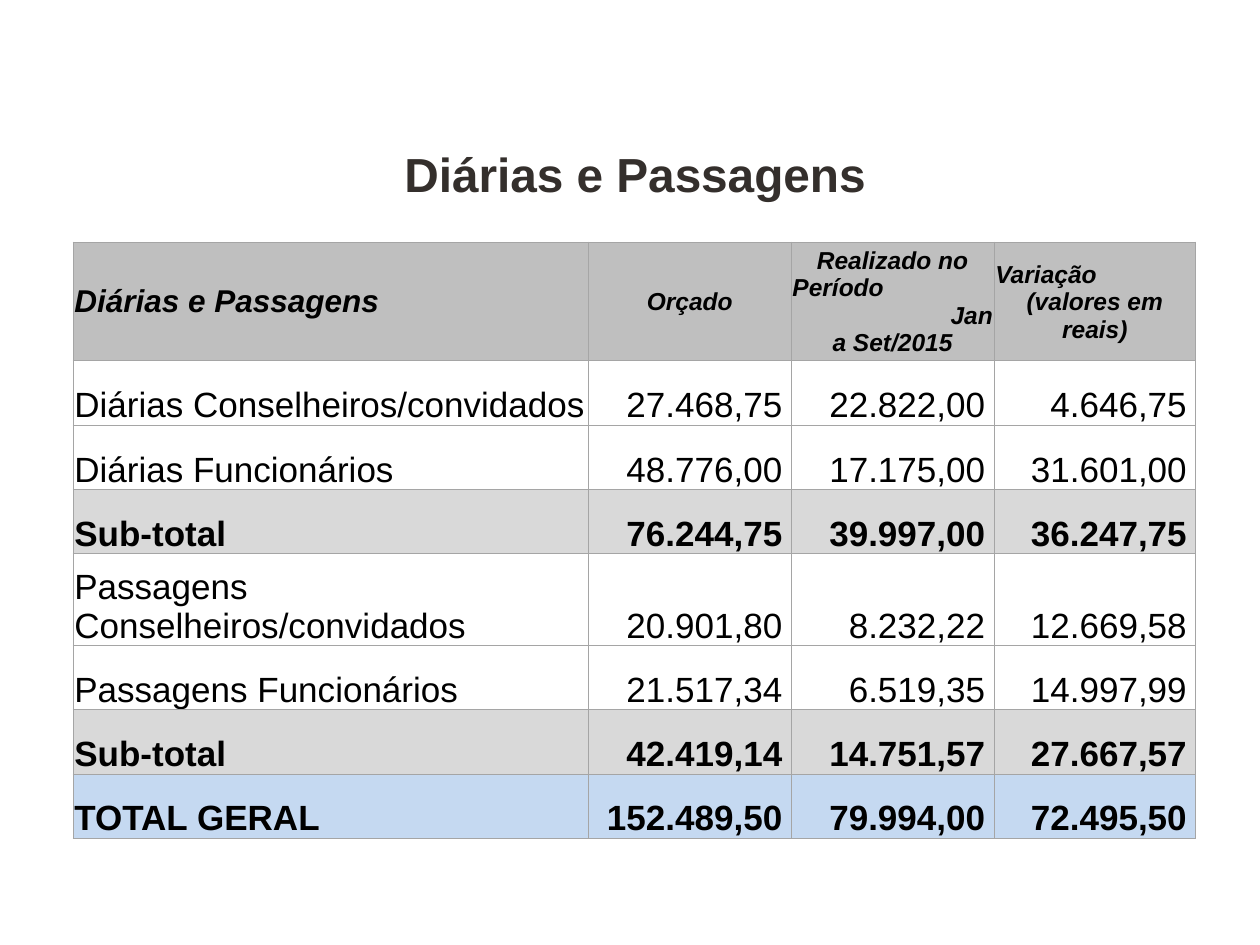
from lxml.etree import SubElement
from pptx import Presentation
from pptx.dml.color import RGBColor
from pptx.enum.text import MSO_ANCHOR as ANCHOR, PP_ALIGN as ALIGN
from pptx.oxml.ns import qn
from pptx.util import Inches, Pt

TITLE = "Diárias e Passagens"
# Each heading: size, then (text, alignment) for every paragraph
HEADINGS = [
    (18, [("Diárias e Passagens", ALIGN.LEFT)]),
    (14, [("Orçado", ALIGN.CENTER)]),
    (14, [("Realizado no", ALIGN.CENTER), ("Período", ALIGN.LEFT),
          ("Jan", ALIGN.RIGHT), ("a Set/2015", ALIGN.CENTER)]),
    (14, [("Variação", ALIGN.LEFT), ("(valores em reais)", ALIGN.CENTER)]),
]
EXPENSES = [
    ("Diárias Conselheiros/convidados", "27.468,75", "22.822,00", "4.646,75"),
    ("Diárias Funcionários", "48.776,00", "17.175,00", "31.601,00"),
    ("Sub-total", "76.244,75", "39.997,00", "36.247,75"),
    ("Passagens Conselheiros/convidados", "20.901,80", "8.232,22", "12.669,58"),
    ("Passagens Funcionários", "21.517,34", "6.519,35", "14.997,99"),
    ("Sub-total", "42.419,14", "14.751,57", "27.667,57"),
    ("TOTAL GERAL", "152.489,50", "79.994,00", "72.495,50"),
]
TOTAL_FILLS = {"Sub-total": "D9D9D9", "TOTAL GERAL": "C5D9F1"}
HEADING_FILL = "BFBFBF"
COLUMN_WIDTHS = [4.09, 1.61, 1.61, 1.6]
HEADING_HEIGHT, ROW_HEIGHT, TWO_LINE_HEIGHT = 0.94, 0.51, 0.73
LEFT, WIDTH = 0.58, 8.92
THIN, THICK = ("A5A5A5", 0.5), ("A6A6A6", 1)


def rgb(color):
    return RGBColor.from_string(color)


def write(frame, paragraphs, size, color="000000", **style):
    """Fill a text frame with (text, alignment) paragraphs in one style."""
    for index, (text, alignment) in enumerate(paragraphs):
        paragraph = frame.add_paragraph() if index else frame.paragraphs[0]
        paragraph.alignment = alignment
        run = paragraph.add_run()
        run.text = text
        run.font.color.rgb = rgb(color)
        for name, value in {"name": "Arial", "size": Pt(size), **style}.items():
            setattr(run.font, name, value)


def set_borders(cell, **special):
    properties = cell._tc.get_or_add_tcPr()
    for side in "LRTB":
        color, width = special.get(side, THIN)
        line = SubElement(properties, qn(f"a:ln{side}"), w=str(Pt(width)))
        SubElement(SubElement(line, qn("a:solidFill")), qn("a:srgbClr"), val=color)


def format_cell(cell, anchor, fill, right_margin=0.01, **borders):
    layout = {"vertical_anchor": anchor, "margin_left": Inches(0.01),
              "margin_right": Inches(right_margin),
              "margin_top": Inches(0.01), "margin_bottom": 0}
    for name, value in layout.items():
        setattr(cell, name, value)
    set_borders(cell, **borders)
    if fill:
        cell.fill.solid()
        cell.fill.fore_color.rgb = rgb(fill)
    else:
        cell.fill.background()


prs = Presentation()
prs.slide_width, prs.slide_height = Inches(10), Inches(7.5)
slide = prs.slides.add_slide(prs.slide_layouts[6])

title = slide.shapes.add_textbox(
    Inches(LEFT), Inches(1.1), Inches(WIDTH), Inches(0.55)).text_frame
title.word_wrap = True
title.vertical_anchor = ANCHOR.MIDDLE
title.margin_top = title.margin_bottom = 0
write(title, [(TITLE, ALIGN.CENTER)], 27.3, "342F2C", bold=True)

table = slide.shapes.add_table(
    len(EXPENSES) + 1, len(HEADINGS),
    Inches(LEFT), Inches(1.92), Inches(WIDTH), Inches(4.68)).table
table.first_row = table.horz_banding = False
for column, width in zip(table.columns, COLUMN_WIDTHS):
    column.width = Inches(width)

table.rows[0].height = Inches(HEADING_HEIGHT)
HEADING_BORDERS = {0: {"R": THICK}, 1: {"L": THICK}}
for col, (size, paragraphs) in enumerate(HEADINGS):
    cell = table.cell(0, col)
    format_cell(cell, ANCHOR.MIDDLE, HEADING_FILL, **HEADING_BORDERS.get(col, {}))
    write(cell.text_frame, paragraphs, size, bold=True, italic=True)

for row, expense in enumerate(EXPENSES, 1):
    label = expense[0]
    wraps = label.startswith("Passagens Conselheiros")
    table.rows[row].height = Inches(TWO_LINE_HEIGHT if wraps else ROW_HEIGHT)
    for col, text in enumerate(expense):
        cell = table.cell(row, col)
        format_cell(cell, ANCHOR.BOTTOM, TOTAL_FILLS.get(label), 0.07 if col else 0.01)
        write(cell.text_frame, [(text, ALIGN.RIGHT if col else ALIGN.LEFT)], 20,
              bold=label in TOTAL_FILLS, italic=False)

prs.save("out.pptx")
